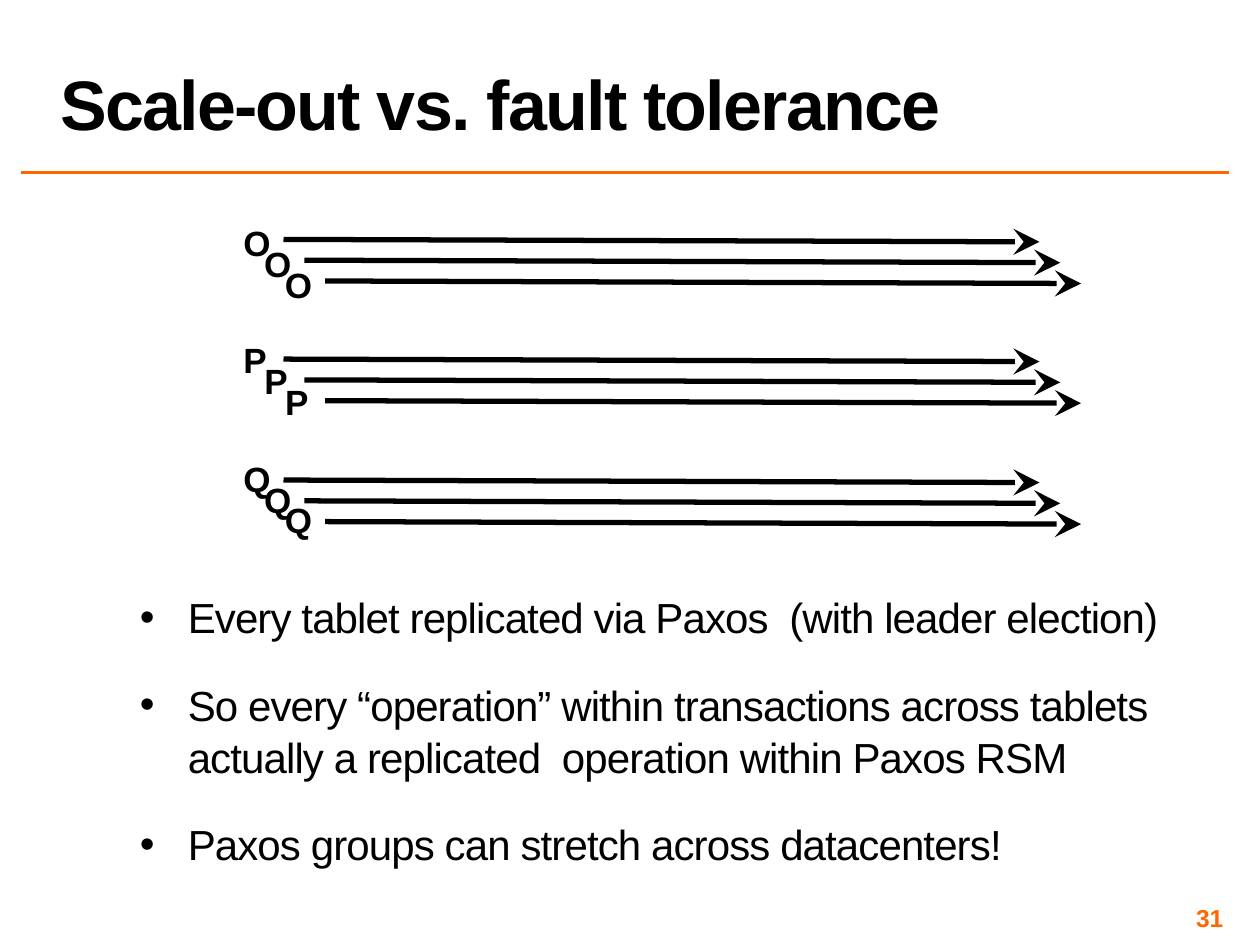
from dataclasses import dataclass

from pptx import Presentation
from pptx import util as u
from pptx.dml.color import RGBColor
from pptx.enum import shapes, text
from pptx.oxml.ns import qn
from lxml import etree

COLORS = {"ink": "000000", "accent": "FF6600"}
REPLICAS = 3
STEP = 0.165
BULLETS = [
    "Every tablet replicated via Paxos  (with leader election)",
    "So every “operation” within transactions across tablets actually a replicated  operation within Paxos RSM",
    "Paxos groups can stretch across datacenters!",
]


@dataclass
class Tablet:
    name: str
    label_top: float
    arrow_top: float
    label_width: float


TABLETS = [
    Tablet("O", 1.71, 1.9, 0.42),
    Tablet("P", 2.64, 2.85, 0.39),
    Tablet("Q", 3.58, 3.81, 0.42),
]


def add_line(page, start: tuple, end: tuple, color: str, width: float, arrow: bool = False):
    line = page.shapes.add_connector(
        shapes.MSO_CONNECTOR.STRAIGHT, *(u.Inches(value) for value in start + end)
    )
    line.line.color.rgb = RGBColor.from_string(COLORS[color])
    line.line.width = u.Pt(width)
    properties = line._element.spPr
    if arrow:
        outline = properties.find(qn("a:ln"))
        etree.SubElement(outline, qn("a:tailEnd"), type="stealth", w="lg", len="lg")
    etree.SubElement(properties, qn("a:effectLst"))
    return line


def add_text(page, lines: list, place: tuple, *, size: float, color: str = "ink",
             bold: bool = False, align=text.PP_ALIGN.LEFT,
             anchor=text.MSO_ANCHOR.TOP, inset: tuple = (0.1, 0.05),
             wrap: bool = True, spacing: float = 1.0, tracking: float = 0,
             bulleted: bool = False):
    box = page.shapes.add_textbox(*(u.Inches(value) for value in place))
    frame = box.text_frame
    frame.word_wrap = wrap
    frame.vertical_anchor = anchor
    frame.margin_left = frame.margin_right = u.Inches(inset[0])
    frame.margin_top = frame.margin_bottom = u.Inches(inset[1])
    for index, line in enumerate(lines):
        para = frame.add_paragraph() if index else frame.paragraphs[0]
        para.alignment = align
        para.line_spacing = spacing
        if bulleted:
            add_bullet(para)
        span = para.add_run()
        span.text = line
        span.font.name = "Arial"
        span.font.size = u.Pt(size)
        span.font.bold = bold
        span.font.color.rgb = RGBColor.from_string(COLORS[color])
        if tracking:
            span.font._element.set("spc", str(round(tracking * 100)))
    return box


def add_bullet(para) -> None:
    para.space_before = u.Pt(12)
    para.space_after = u.Pt(8)
    properties = para._element.get_or_add_pPr()
    indent = u.Inches(0.38)
    properties.set("marL", str(indent))
    properties.set("indent", str(-indent))
    etree.SubElement(properties, qn("a:buFont"), typeface="Arial")
    etree.SubElement(properties, qn("a:buChar"), char="•")


def add_replicas(page, tablet: Tablet) -> None:
    for index in range(REPLICAS):
        shift = index * STEP
        top = tablet.arrow_top + shift
        add_line(page, (2.25 + shift, top), (8.25 + shift, top + 0.02), "ink", 3, arrow=True)
        add_text(page, [tablet.name],
                 (1.83 + shift, tablet.label_top + shift, tablet.label_width, 0.44),
                 size=20, bold=True, align=text.PP_ALIGN.CENTER, wrap=False)


def main() -> None:
    deck = Presentation()
    deck.slide_width = u.Inches(10)
    deck.slide_height = u.Inches(7.5)
    page = deck.slides.add_slide(deck.slide_layouts[6])
    add_line(page, (0.17, 1.37), (9.75, 1.37), "accent", 2)
    add_text(page, ["31"], (7.42, 7.17, 2.33, 0.23), size=14, color="accent", bold=True,
             align=text.PP_ALIGN.RIGHT, anchor=text.MSO_ANCHOR.MIDDLE, inset=(0.04, 0.04))
    add_text(page, ["Scale-out vs. fault tolerance"], (0.38, 0.02, 9.37, 1.17), size=40,
             bold=True, anchor=text.MSO_ANCHOR.BOTTOM, spacing=0.8, tracking=-1)
    for tablet in TABLETS:
        add_replicas(page, tablet)
    add_text(page, BULLETS, (1.07, 4.64, 8.49, 2.93), size=24, inset=(0.04, 0.04),
             spacing=1.04, tracking=-0.5, bulleted=True)
    deck.save("out.pptx")


if __name__ == "__main__":
    main()
